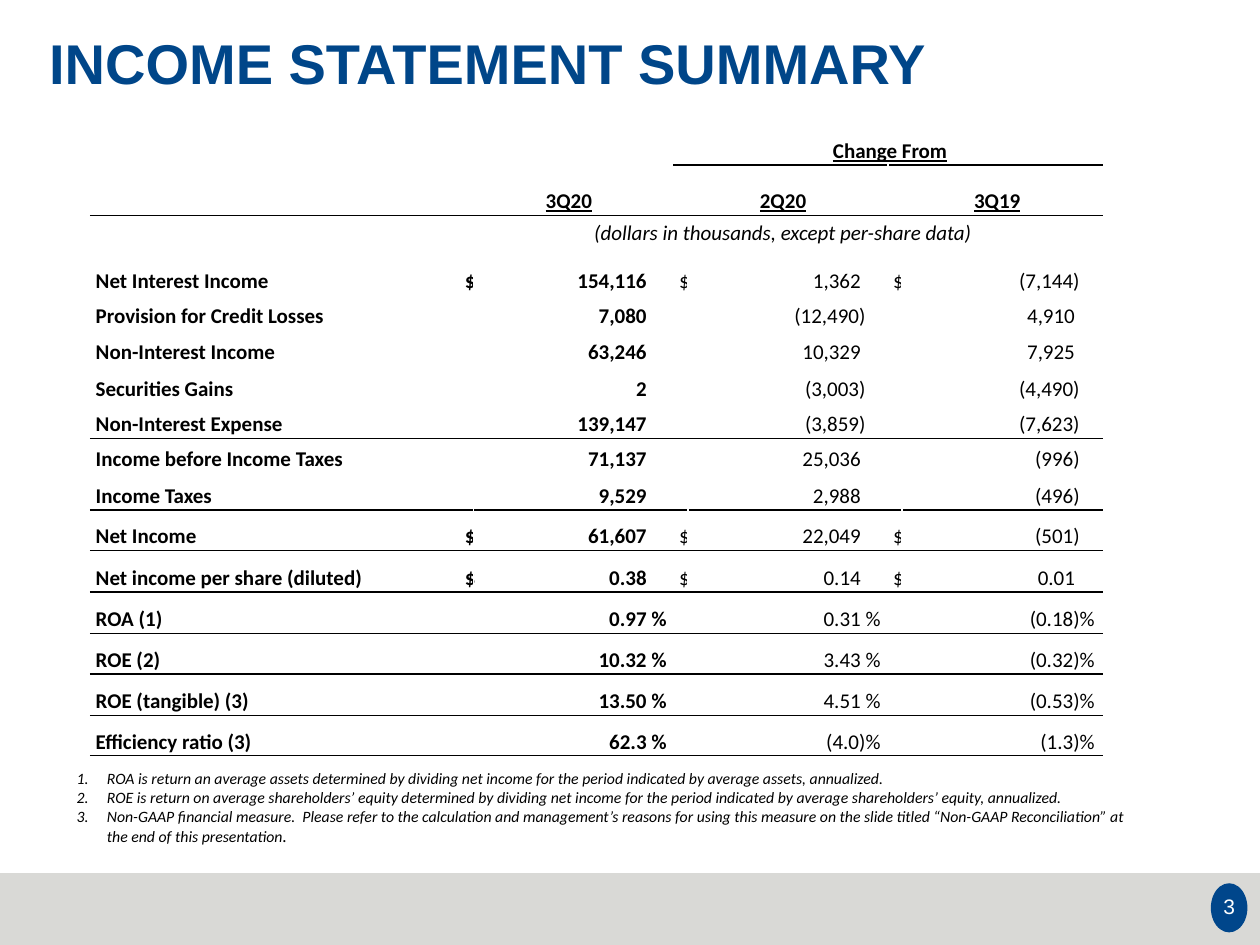
from lxml.etree import SubElement
from pptx import Presentation
from pptx.dml.color import RGBColor
from pptx.enum.shapes import MSO_SHAPE
from pptx.enum.text import MSO_ANCHOR, MSO_AUTO_SIZE, PP_ALIGN
from pptx.oxml.ns import qn
from pptx.util import Inches, Pt

HUES = {"navy": "004689", "disc": "00468B", "band": "D9D9D6",
        "black": "000000", "white": "FFFFFF"}
HARD = chr(160)
COLS = [2.93] + [0.11, 1.41, 0.18] * 3
ROWS = [0.4, 0.4, 0.25, 0.38, 0.28, 0.29, 0.29, 0.28,
        0.28, 0.29, 0.32, 0.33, 0.33, 0.32, 0.33, 0.32]
RULED = {1, 7, *range(9, 16)}
DATA = [
    ("Net Interest Income", "$", "154,116", "1,362", "(7,144)"),
    ("Provision for Credit Losses", "", "7,080", "(12,490)", "4,910"),
    ("Non-Interest Income", "", "63,246", "10,329", "7,925"),
    ("Securities Gains", "", "2", "(3,003)", "(4,490)"),
    ("Non-Interest Expense", "", "139,147", "(3,859)", "(7,623)"),
    ("Income before Income Taxes", "", "71,137", "25,036", "(996)"),
    ("Income Taxes", "", "9,529", "2,988", "(496)"),
    ("Net Income", "$", "61,607", "22,049", "(501)"),
    ("Net income per share (diluted)", "$", "0.38", "0.14", "0.01"),
    ("ROA (1)", "%", "0.97", "0.31", "(0.18)"),
    ("ROE (2)", "%", "10.32", "3.43", "(0.32)"),
    ("ROE (tangible) (3)", "%", "13.50", "4.51", "(0.53)"),
    ("Efficiency ratio (3)", "%", "62.3", "(4.0)", "(1.3)"),
]
NOTES = [
    [("ROA is return an average assets determined by dividing net income for "
      "the period indicated by average assets, annualized.", 9)],
    [("ROE is return on average shareholders’ equity determined by dividing net "
      "income for the period indicated by average shareholders’ equity, "
      "annualized.", 9)],
    [("Non-GAAP financial measure.  Please refer to the calculation and "
      "management’s reasons for using this measure on the slide titled "
      "“Non-GAAP Reconciliation” at the end of this presentation", 9), (".", 10)],
]


def color(name):
    return RGBColor.from_string(HUES[name])


def write(para, text, size, face="Calibri", hue="black",
          bold=False, slant=False, under=False):
    run = para.add_run()
    run.text = text
    font = run.font
    font.name, font.size = face, Pt(size)
    font.bold, font.italic, font.underline = bold, slant, under
    font.color.rgb = color(hue)


def pad(frame, anchor=MSO_ANCHOR.TOP):
    frame.word_wrap = True
    frame.auto_size = MSO_AUTO_SIZE.NONE
    frame.vertical_anchor = anchor
    frame.margin_left = frame.margin_right = Inches(0.1)
    frame.margin_top = frame.margin_bottom = Inches(0.1)


def add_title(slide, left, top, width, height):
    title = slide.shapes.title
    title.left, title.top = Inches(left), Inches(top)
    title.width, title.height = Inches(width), Inches(height)
    pad(title.text_frame)
    para = title.text_frame.paragraphs[0]
    para.alignment, para.line_spacing = PP_ALIGN.LEFT, 0.9
    write(para, "INCOME STATEMENT SUMMARY", 32, "Arial", "navy", bold=True)


def add_plate(slide, kind, hue, left, top, width, height):
    plate = slide.shapes.add_shape(kind, Inches(left), Inches(top),
                                   Inches(width), Inches(height))
    plate.shadow.inherit = False
    plate.fill.solid()
    plate.fill.fore_color.rgb = color(hue)
    plate.line.fill.background()


def add_footer(slide, left, top, width, height):
    add_plate(slide, MSO_SHAPE.RECTANGLE, "band", left, top, width, height)
    add_plate(slide, MSO_SHAPE.OVAL, "disc",
              left + width - 0.39, top + 0.08, 0.29, 0.39)
    box = slide.shapes.add_textbox(Inches(left + width - 0.48),
                                   Inches(top + 0.07), Inches(0.47), Inches(0.39))
    pad(box.text_frame, MSO_ANCHOR.MIDDLE)
    para = box.text_frame.paragraphs[0]
    para.alignment = PP_ALIGN.CENTER
    write(para, "3", 12, "Arial", "white")


def add_notes(slide, left, top, width, height):
    box = slide.shapes.add_textbox(Inches(left), Inches(top),
                                   Inches(width), Inches(height))
    frame = box.text_frame
    pad(frame)
    for num, runs in enumerate(NOTES, 1):
        para = frame.paragraphs[0] if num == 1 else frame.add_paragraph()
        props = para._p.get_or_add_pPr()
        props.set("marL", str(Inches(0.24)))
        props.set("indent", str(Inches(-0.24)))
        SubElement(props, qn("a:buFont"), typeface="+mj-lt")
        SubElement(props, qn("a:buAutoNum"), type="arabicPeriod", startAt=str(num))
        for text, size in runs:
            write(para, text, size, slant=True)


def edge(cell, above, below):
    props = cell._tc.get_or_add_tcPr()
    sides = [("L", "white"), ("R", "white"), ("T", above), ("B", below)]
    for spot, (side, hue) in enumerate(sides):
        line = SubElement(props, qn("a:ln" + side), w=str(Pt(1)))
        fill = SubElement(line, qn("a:solidFill"))
        SubElement(fill, qn("a:srgbClr"), val=HUES[hue])
        props.insert(spot, line)


def rule(row, col):
    dark = row in RULED or (row == 0 and col > 3)
    return "black" if dark else "white"


def dress(table):
    for row in range(len(ROWS)):
        for col in range(len(COLS)):
            cell = table.cell(row, col)
            if row < 11 or col == 0:
                cell.fill.solid()
                cell.fill.fore_color.rgb = color("white")
            else:
                cell.fill.background()
            edge(cell, rule(row - 1, col), rule(row, col))
            cell.vertical_anchor = MSO_ANCHOR.BOTTOM
            cell.margin_left = cell.margin_right = cell.margin_top = 0
            cell.margin_bottom = Inches(0.02)
            para = cell.text_frame.paragraphs[0]
            para.line_spacing = 0.83
            SubElement(para._p, qn("a:endParaRPr"), sz="1200")


def fill(table, row, col, text, align=PP_ALIGN.LEFT, span=1,
         inset=0.04, right=0, **style):
    cell = table.cell(row, col)
    if span > 1:
        cell.merge(table.cell(row, col + span - 1))
    cell.margin_left, cell.margin_right = Inches(inset), Inches(right)
    if text:
        para = cell.text_frame.paragraphs[0]
        para.alignment = align
        write(para, text, 12, **style)


def add_grid(slide, left, top, width, height):
    table = slide.shapes.add_table(len(ROWS), len(COLS), Inches(left), Inches(top),
                                   Inches(width), Inches(height)).table
    table.first_row = table.horz_banding = False
    for col, size in zip(table.columns, COLS):
        col.width = Inches(size)
    for row, size in zip(table.rows, ROWS):
        row.height = Inches(size)
    dress(table)

    mid = PP_ALIGN.CENTER
    head = dict(align=mid, right=0.01, bold=True, under=True)
    fill(table, 0, 1, "", span=3)
    fill(table, 0, 4, "Change From", span=6, **head)
    for col, name in zip((1, 4, 7), ("3Q20", "2Q20", "3Q19")):
        fill(table, 1, col, name, span=3, **head)
    fill(table, 2, 1, "(dollars in thousands, except per-share data)", mid,
         span=9, right=0.01, slant=True)

    for row, (label, sign, *nums) in enumerate(DATA, 3):
        fill(table, row, 0, label, right=0.04, bold=True)
        for col, num in zip((1, 4, 7), nums):
            bold = col == 1
            text = num if num.endswith(")") else num + HARD
            if sign == "$":
                fill(table, row, col, sign, bold=bold)
                fill(table, row, col + 1, text, PP_ALIGN.RIGHT, inset=0, bold=bold)
            else:
                fill(table, row, col, text, PP_ALIGN.RIGHT, span=2, bold=bold)
            if sign == "%":
                fill(table, row, col + 2, sign, inset=0, right=0.01, bold=bold)


def main():
    deck = Presentation()
    deck.slide_width, deck.slide_height = Inches(10), Inches(7.5)
    slide = deck.slides.add_slide(deck.slide_layouts[5])
    add_footer(slide, 0, 6.93, 10, 0.57)
    add_notes(slide, 0.51, 6, 8.68, 0.72)
    add_title(slide, 0.29, 0.19, 9.6, 1.14)
    add_grid(slide, 0.72, 0.91, 8.02, 5.1)
    deck.save("out.pptx")


if __name__ == "__main__":
    main()
